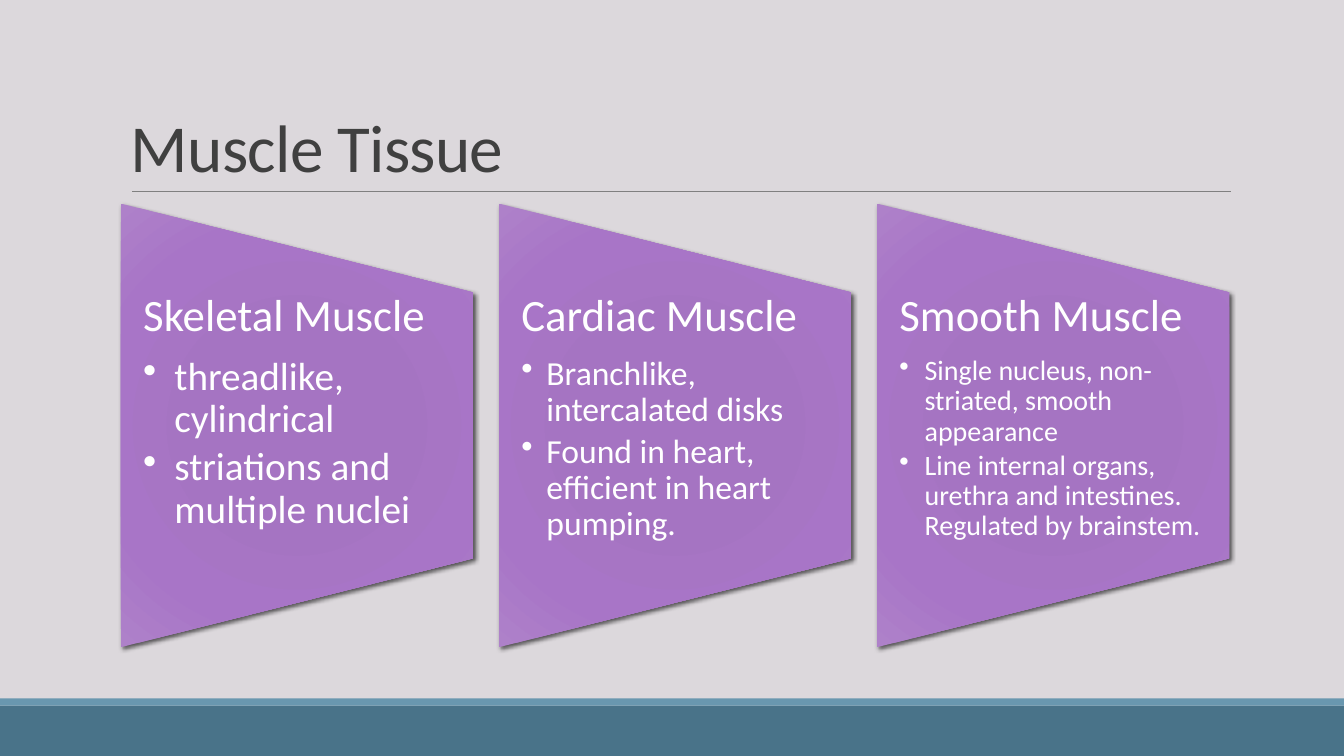
from dataclasses import dataclass

from lxml import etree
from pptx import Presentation
from pptx.dml.color import RGBColor
from pptx.enum.shapes import MSO_CONNECTOR, MSO_SHAPE
from pptx.enum.text import MSO_ANCHOR, PP_ALIGN
from pptx.oxml.ns import qn
from pptx.util import Inches, Pt

RECTANGLE = MSO_SHAPE.RECTANGLE
TRAPEZOID = MSO_SHAPE.FLOWCHART_MANUAL_OPERATION
STRAIGHT = MSO_CONNECTOR.STRAIGHT
TOP, BOTTOM = MSO_ANCHOR.TOP, MSO_ANCHOR.BOTTOM
LEFT = PP_ALIGN.LEFT


@dataclass(frozen=True)
class Theme:
    font: str = "Calibri"
    background: str = "DCD8DC"
    band: str = "497389"
    band_edge: str = "6997AF"
    rule: str = "808080"
    title: str = "404040"
    card_text: str = "FFFFFF"
    shadow: str = "000000"
    card_gradient: tuple = ((0, "A372C2"), (34, "A574C2"), (70, "A875C7"), (100, "AE81C9"))
    title_size: int = 48
    heading_size: int = 32


THEME = Theme()

# Card layout
CARD_LEFT, CARD_STEP = 1.2, 3.75
CARD_WIDTH, CARD_HEIGHT, CARD_MIDDLE = 3.49, 4.4, 4.22
TEXT_TOP, TEXT_HEIGHT = 2.9, 2.64

# Heading, bullet size, bullet indent, bullets
MUSCLES = [
    ("Skeletal Muscle", 28, 0.31,
     ["threadlike, cylindrical", "striations and multiple nuclei"]),
    ("Cardiac Muscle", 24, 0.25,
     ["Branchlike, intercalated disks", "Found in heart, efficient in heart pumping."]),
    ("Smooth Muscle", 20, 0.25,
     ["Single nucleus, non-striated, smooth appearance",
      "Line internal organs, urethra and intestines. Regulated by brainstem."]),
]


def rgb(color):
    return RGBColor.from_string(color)


def add_child(parent, tag, **attributes):
    child = etree.SubElement(parent, qn(tag))
    for name, value in attributes.items():
        child.set(name, str(value))
    return child


def add_band(slide, top, height, color):
    band = slide.shapes.add_shape(RECTANGLE, 0, Inches(top), Inches(13.33), Inches(height))
    band.shadow.inherit = False
    band.fill.solid()
    band.fill.fore_color.rgb = rgb(color)
    band.line.fill.background()


def add_rule(slide, left, right, y):
    rule = slide.shapes.add_connector(STRAIGHT, Inches(left), Inches(y), Inches(right), Inches(y))
    rule.line.color.rgb = rgb(THEME.rule)
    rule.line.width = Pt(0.5)
    add_child(rule._element.spPr, "a:effectLst")


def add_text_frame(slide, left, top, width, height, anchor):
    box = slide.shapes.add_textbox(Inches(left), Inches(top), Inches(width), Inches(height))
    frame = box.text_frame
    frame.word_wrap = True
    frame.vertical_anchor = anchor
    return frame


def style_paragraph(paragraph, size, color, line_spacing, space_after=0):
    paragraph.alignment = LEFT
    paragraph.line_spacing = line_spacing
    paragraph.space_after = Pt(space_after)
    paragraph.font.name = THEME.font
    paragraph.font.size = Pt(size)
    paragraph.font.color.rgb = rgb(color)


def add_title(slide, text):
    paragraph = add_text_frame(slide, 1.2, 0.31, 11, 1.59, BOTTOM).paragraphs[0]
    run = paragraph.add_run()
    run.text = text
    run._r.get_or_add_rPr().set("spc", "-50")
    style_paragraph(paragraph, THEME.title_size, THEME.title, 0.85)


def fill_radial(shape, stops):
    shape.fill.gradient()
    gradient = shape._element.spPr.find(qn("a:gradFill"))
    for child in list(gradient):
        gradient.remove(child)
    gradient.set("rotWithShape", "1")
    stop_list = add_child(gradient, "a:gsLst")
    for position, color in stops:
        stop = add_child(stop_list, "a:gs", pos=position * 1000)
        add_child(stop, "a:srgbClr", val=color)
    circle = add_child(gradient, "a:path", path="circle")
    add_child(circle, "a:fillToRect", l=100000, t=100000, r=100000, b=100000)


def cast_shadow(shape):
    shape.shadow.inherit = False
    effects = shape._element.spPr.find(qn("a:effectLst"))
    shadow = add_child(effects, "a:outerShdw", blurRad=Pt(3), dist=Pt(2),
                       dir=45 * 60000, algn="ctr", rotWithShape=0)
    color = add_child(shadow, "a:srgbClr", val=THEME.shadow)
    add_child(color, "a:alpha", val=60000)


def add_panel(slide, left):
    # Turned a quarter, so the card's height is the shape's width
    panel = slide.shapes.add_shape(
        TRAPEZOID,
        Inches(left + (CARD_WIDTH - CARD_HEIGHT) / 2), Inches(CARD_MIDDLE - CARD_WIDTH / 2),
        Inches(CARD_HEIGHT), Inches(CARD_WIDTH))
    panel.rotation = 270
    panel.line.fill.background()
    fill_radial(panel, THEME.card_gradient)
    cast_shadow(panel)


def add_bullet(frame, text, size, indent):
    paragraph = frame.add_paragraph()
    paragraph.text = text
    paragraph.level = 1
    properties = paragraph._p.get_or_add_pPr()
    properties.set("marL", str(Inches(indent)))
    properties.set("indent", str(-Inches(indent)))
    add_child(properties, "a:buChar", char="•")
    style_paragraph(paragraph, size, THEME.card_text, 0.9, 0.15 * size)


def add_card(slide, left, heading, bullet_size, indent, bullets):
    add_panel(slide, left)
    frame = add_text_frame(slide, left, TEXT_TOP, CARD_WIDTH, TEXT_HEIGHT, TOP)
    frame.margin_left = frame.margin_right = Inches(0.22)
    frame.margin_top = frame.margin_bottom = 0
    frame.paragraphs[0].text = heading
    style_paragraph(frame.paragraphs[0], THEME.heading_size, THEME.card_text, 0.9,
                    0.35 * THEME.heading_size)
    for bullet in bullets:
        add_bullet(frame, bullet, bullet_size, indent)


def main():
    deck = Presentation()
    deck.slide_width, deck.slide_height = Inches(13.33), Inches(7.5)
    slide = deck.slides.add_slide(deck.slide_layouts[6])
    slide.background.fill.solid()
    slide.background.fill.fore_color.rgb = rgb(THEME.background)

    # Footer bands
    add_band(slide, 7, 0.5, THEME.band)
    add_band(slide, 6.93, 0.07, THEME.band_edge)

    # Title and rule
    add_rule(slide, 1.31, 12.21, 1.9)
    add_title(slide, "Muscle Tissue")

    # Muscle cards
    for index, muscle in enumerate(MUSCLES):
        add_card(slide, CARD_LEFT + index * CARD_STEP, *muscle)

    deck.save("out.pptx")


if __name__ == "__main__":
    main()
